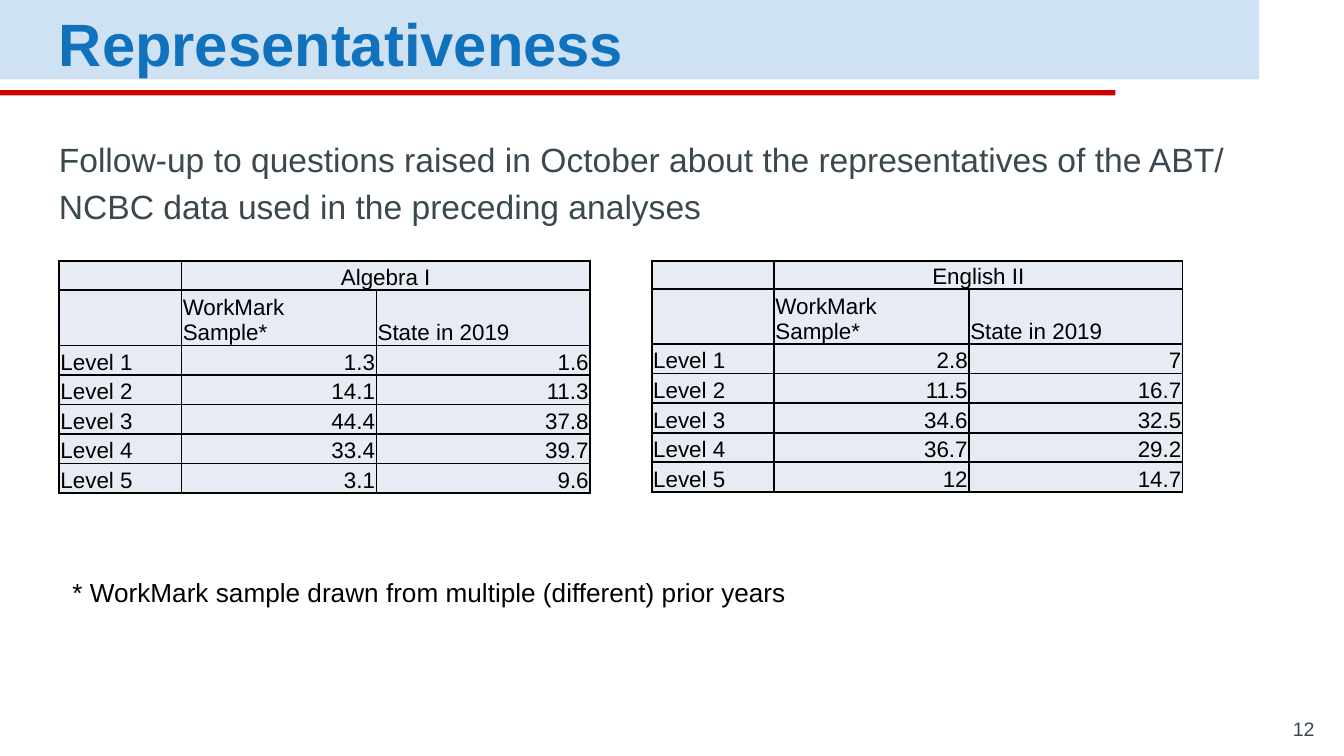
"""Build the Representativeness slide with two level comparison tables."""
from lxml import etree
from pptx import Presentation
from pptx.dml.color import RGBColor
from pptx.enum.shapes import MSO_SHAPE
from pptx.enum.text import MSO_ANCHOR, PP_ALIGN
from pptx.oxml.ns import qn
from pptx.util import Inches, Pt

RECTANGLE = MSO_SHAPE.RECTANGLE
TOP, MIDDLE, BOTTOM = MSO_ANCHOR.TOP, MSO_ANCHOR.MIDDLE, MSO_ANCHOR.BOTTOM
LEFT, CENTER, RIGHT = PP_ALIGN.LEFT, PP_ALIGN.CENTER, PP_ALIGN.RIGHT
BLACK, SLATE, BLUE = "000000", "3A4950", "1071BD"


def color(value):
    return RGBColor.from_string(value)


def write(para, text, size, tint, align=LEFT, bold=False):
    para.alignment = align
    span = para.add_run()
    span.text = text
    span.font.name = "Arial"
    span.font.size = Pt(size)
    span.font.bold = bold
    span.font.color.rgb = color(tint)


deck = Presentation()
deck.slide_width = Inches(10)
deck.slide_height = Inches(10) * 9 // 16
page = deck.slides.add_slide(deck.slide_layouts[6])

for top, width, height, tint in [(0, 9.37, 0.59, "CFE2F3"), (0.67, 8.3, 0.04, "CC0000")]:
    band = page.shapes.add_shape(RECTANGLE, 0, Inches(top), Inches(width), Inches(height))
    band.shadow.inherit = False
    band.fill.solid()
    band.fill.fore_color.rgb = color(tint)
    band.line.fill.background()

intro = ("Follow-up to questions raised in October about the representatives of the ABT/ "
         "NCBC data used in the preceding analyses")
footnote = "* WorkMark sample drawn from multiple (different) prior years"
texts = [
    ((0.34, 0.03, 9.03, 0.49), "Representativeness", 32, BLUE, LEFT, True, MIDDLE, 0.1, 1.15),
    ((9.28, 5.34, 0.6, 0.26), "12", 10.5, SLATE, RIGHT, False, BOTTOM, 0.1, None),
    ((0.34, 0.89, 9.07, 1.2), intro, 18, SLATE, LEFT, False, TOP, 0.1, 1.15),
    ((0.44, 4.24, 7.05, 0.34), footnote, 14, BLACK, LEFT, False, TOP, 0.05, None),
]
for place, text, size, tint, align, bold, anchor, inset, spacing in texts:
    box = page.shapes.add_textbox(*map(Inches, place))
    frame = box.text_frame
    frame.word_wrap = True
    frame.vertical_anchor = anchor
    frame.margin_left = frame.margin_right = Inches(0.1)
    frame.margin_top = frame.margin_bottom = Inches(inset)
    para = frame.paragraphs[0]
    write(para, text, size, tint, align, bold)
    if spacing:
        para.line_spacing = spacing
        para.space_after = Pt(16)

column_widths = [0.91, 1.45, 1.59]
tables = [
    ("Algebra I", 0.44, 0.22,
     [("1.3", "1.6"), ("14.1", "11.3"), ("44.4", "37.8"), ("33.4", "39.7"), ("3.1", "9.6")]),
    ("English II", 4.85, 0.19,
     [("2.8", "7"), ("11.5", "16.7"), ("34.6", "32.5"), ("36.7", "29.2"), ("12", "14.7")]),
]
for subject, left, first_height, levels in tables:
    rows = [("", subject, ""), ("", "WorkMark Sample*", "State in 2019")]
    rows += [(f"Level {number}", *values) for number, values in enumerate(levels, 1)]
    heights = [first_height, 0.39] + [0.22] * len(levels)
    holder = page.shapes.add_table(len(rows), 3, Inches(left), Inches(1.94),
                                   Inches(sum(column_widths)), Inches(sum(heights)))
    grid = holder.table
    grid.first_row = grid.horz_banding = False
    for column, width in zip(grid.columns, column_widths):
        column.width = Inches(width)
    for row, height in zip(grid.rows, heights):
        row.height = Inches(height)
    grid.cell(0, 1).merge(grid.cell(0, 2))

    for row_index, row in enumerate(rows):
        for column_index, text in enumerate(row):
            cell = grid.cell(row_index, column_index)
            cell.vertical_anchor = BOTTOM
            cell.margin_left = cell.margin_right = cell.margin_top = Inches(0.01)
            cell.margin_bottom = 0
            properties = cell._tc.get_or_add_tcPr()
            for side in ("lnL", "lnR", "lnT", "lnB"):
                border = etree.SubElement(properties, qn(f"a:{side}"), w=str(Pt(1)))
                paint = etree.SubElement(border, qn("a:solidFill"))
                etree.SubElement(paint, qn("a:srgbClr"), val=BLACK)
            cell.fill.solid()
            cell.fill.fore_color.rgb = color("E7EBF4")
            para = cell.text_frame.paragraphs[0]
            if text:
                align = CENTER if row_index == 0 else LEFT
                if row_index > 1 and column_index > 0:
                    align = RIGHT
                write(para, text, 12, BLACK, align)
            else:
                ending = etree.SubElement(para._p, qn("a:endParaRPr"), sz="1200")
                etree.SubElement(ending, qn("a:latin"), typeface="Arial")

deck.save("out.pptx")
